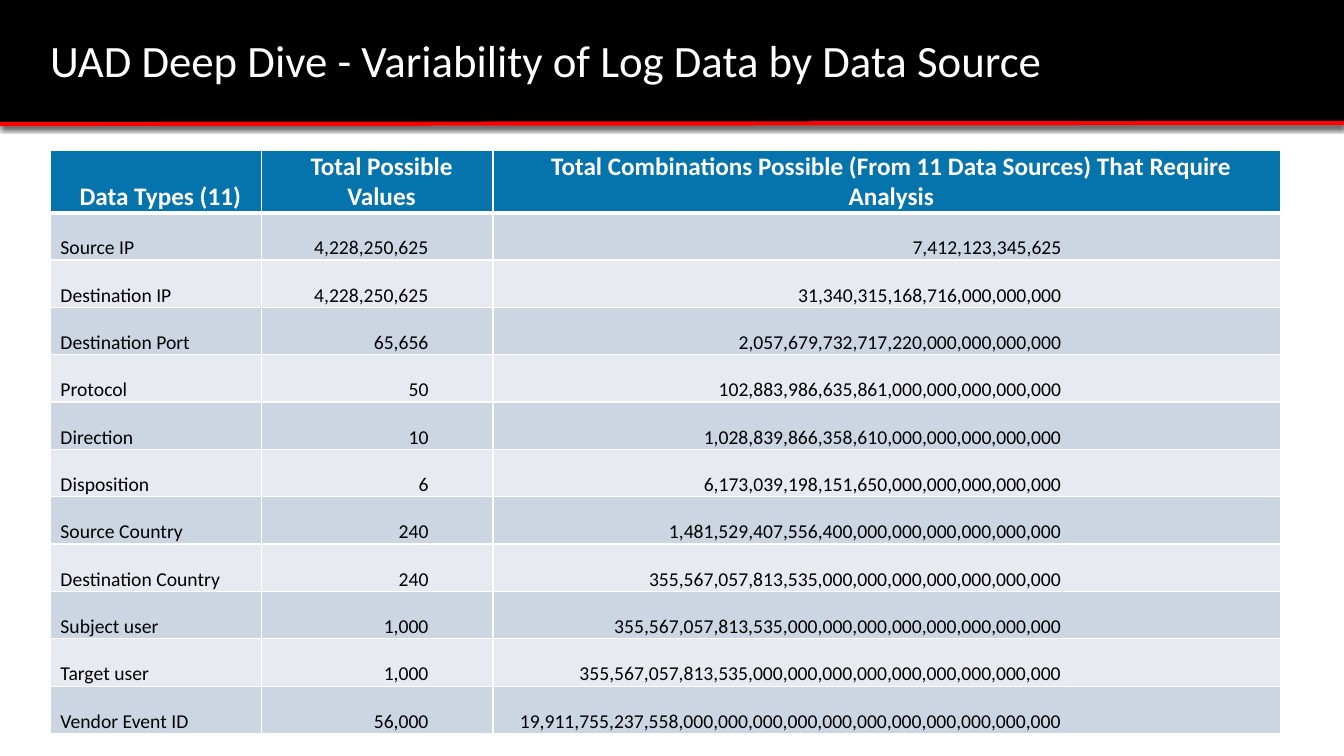
from dataclasses import dataclass

from lxml.etree import SubElement
from pptx import Presentation
from pptx.dml.color import RGBColor
from pptx.enum.shapes import MSO_CONNECTOR, MSO_SHAPE
from pptx.enum.text import MSO_ANCHOR, PP_ALIGN
from pptx.oxml.ns import qn
from pptx.util import Inches, Pt


@dataclass(frozen=True)
class Theme:
    font: str = "Calibri"
    banner: str = "000000"
    accent: str = "FF0000"
    header: str = "0574AC"
    bands: tuple = ("CCD6E3", "E7EBF1")
    light: str = "FFFFFF"
    dark: str = "000000"
    title_size: int = 32
    header_size: int = 18
    body_size: int = 14


TITLE = "UAD Deep Dive - Variability of Log Data by Data Source"
HEADINGS = (
    "Data Types (11)",
    "Total Possible Values",
    "Total Combinations Possible (From 11 Data Sources) That Require Analysis",
)
DATA_TYPES = (
    ("Source IP", "4,228,250,625", "7,412,123,345,625"),
    ("Destination IP", "4,228,250,625", "31,340,315,168,716,000,000,000"),
    ("Destination Port", "65,656", "2,057,679,732,717,220,000,000,000,000"),
    ("Protocol", "50", "102,883,986,635,861,000,000,000,000,000"),
    ("Direction", "10", "1,028,839,866,358,610,000,000,000,000,000"),
    ("Disposition", "6", "6,173,039,198,151,650,000,000,000,000,000"),
    ("Source Country", "240", "1,481,529,407,556,400,000,000,000,000,000,000"),
    ("Destination Country", "240", "355,567,057,813,535,000,000,000,000,000,000,000"),
    ("Subject user", "1,000", "355,567,057,813,535,000,000,000,000,000,000,000,000"),
    ("Target user", "1,000", "355,567,057,813,535,000,000,000,000,000,000,000,000,000"),
    ("Vendor Event ID", "56,000", "19,911,755,237,558" + ",000" * 11),
)
COLUMN_WIDTHS = (2.09, 2.3, 7.81)
HEADER_HEIGHT, ROW_HEIGHT = 0.62, 0.47
HEADER_MARGINS = (0.25, 0.16)
BODY_MARGINS = ((0.1, 0.01), (0.1, 0.64), (0.1, 2.17))
BODY_ALIGNS = (PP_ALIGN.LEFT, PP_ALIGN.RIGHT, PP_ALIGN.RIGHT)


def write(frame, text, *, font, size, color, bold=False, align=PP_ALIGN.LEFT, spacing=1.0):
    frame.word_wrap = True
    paragraph = frame.paragraphs[0]
    paragraph.alignment = align
    paragraph.line_spacing = spacing
    run = paragraph.add_run()
    run.text = text
    run.font.name = font
    run.font.size = Pt(size)
    run.font.bold = bold
    run.font.color.rgb = RGBColor.from_string(color)


class SlideBuilder:
    def __init__(self, slide, theme):
        self.slide = slide
        self.theme = theme

    def banner(self, width, height):
        banner = self.slide.shapes.add_shape(
            MSO_SHAPE.ROUND_2_SAME_RECTANGLE, 0, 0, Inches(width), Inches(height))
        banner.adjustments[0] = banner.adjustments[1] = 0
        banner.shadow.inherit = False
        banner.fill.solid()
        banner.fill.fore_color.rgb = RGBColor.from_string(self.theme.banner)
        banner.line.fill.background()

    def rule(self, start, end):
        rule = self.slide.shapes.add_connector(
            MSO_CONNECTOR.STRAIGHT, *map(Inches, start + end))
        rule.line.color.rgb = RGBColor.from_string(self.theme.accent)
        rule.line.width = Pt(3)
        effects = SubElement(rule._element.spPr, qn("a:effectLst"))
        shadow = SubElement(effects, qn("a:outerShdw"), blurRad=str(Pt(4)),
                            dist=str(Pt(1)), dir="5400000", rotWithShape="0")
        SubElement(shadow, qn("a:srgbClr"), val=self.theme.dark)

    def title(self, text, left, top, width, height):
        box = self.slide.shapes.add_textbox(*map(Inches, (left, top, width, height)))
        box.text_frame.vertical_anchor = MSO_ANCHOR.MIDDLE
        write(box.text_frame, text, font=self.theme.font, size=self.theme.title_size,
              color=self.theme.light, spacing=0.9)

    def cell(self, cell, text, fill, margins, top=1, bottom=1, **text_format):
        cell.vertical_anchor = MSO_ANCHOR.BOTTOM
        cell.margin_left, cell.margin_right = map(Inches, margins)
        cell.margin_top, cell.margin_bottom = Inches(0.01), 0
        properties = cell._tc.get_or_add_tcPr()
        for side, weight in (("L", 1), ("R", 1), ("T", top), ("B", bottom)):
            border = SubElement(properties, qn(f"a:ln{side}"), w=str(Pt(weight)))
            solid = SubElement(border, qn("a:solidFill"))
            SubElement(solid, qn("a:srgbClr"), val=self.theme.light)
        cell.fill.solid()
        cell.fill.fore_color.rgb = RGBColor.from_string(fill)
        write(cell.text_frame, text, font=self.theme.font, **text_format)

    def table(self, left, top):
        theme = self.theme
        height = HEADER_HEIGHT + ROW_HEIGHT * len(DATA_TYPES)
        table = self.slide.shapes.add_table(
            len(DATA_TYPES) + 1, len(HEADINGS), Inches(left), Inches(top),
            Inches(sum(COLUMN_WIDTHS)), Inches(height)).table
        for column, width in zip(table.columns, COLUMN_WIDTHS):
            column.width = Inches(width)
        for index, row in enumerate(table.rows):
            row.height = Inches(ROW_HEIGHT if index else HEADER_HEIGHT)
        for column, heading in enumerate(HEADINGS):
            self.cell(table.cell(0, column), heading, theme.header, HEADER_MARGINS,
                      bottom=3, size=theme.header_size, color=theme.light,
                      bold=True, align=PP_ALIGN.CENTER)
        for index, values in enumerate(DATA_TYPES):
            for column, value in enumerate(values):
                self.cell(table.cell(index + 1, column), value, theme.bands[index % 2],
                          BODY_MARGINS[column], top=1 if index else 3,
                          size=theme.body_size, color=theme.dark,
                          align=BODY_ALIGNS[column])


def main():
    presentation = Presentation()
    presentation.slide_width = Inches(13.33)
    presentation.slide_height = Inches(7.5)
    slide = presentation.slides.add_slide(presentation.slide_layouts[6])
    builder = SlideBuilder(slide, Theme())
    builder.banner(13.33, 1.22)
    builder.rule((0, 1.23), (13.33, 1.22))
    builder.title(TITLE, 0.4, 0.33, 11.43, 0.58)
    builder.table(0.5, 1.49)
    presentation.save("out.pptx")


if __name__ == "__main__":
    main()
